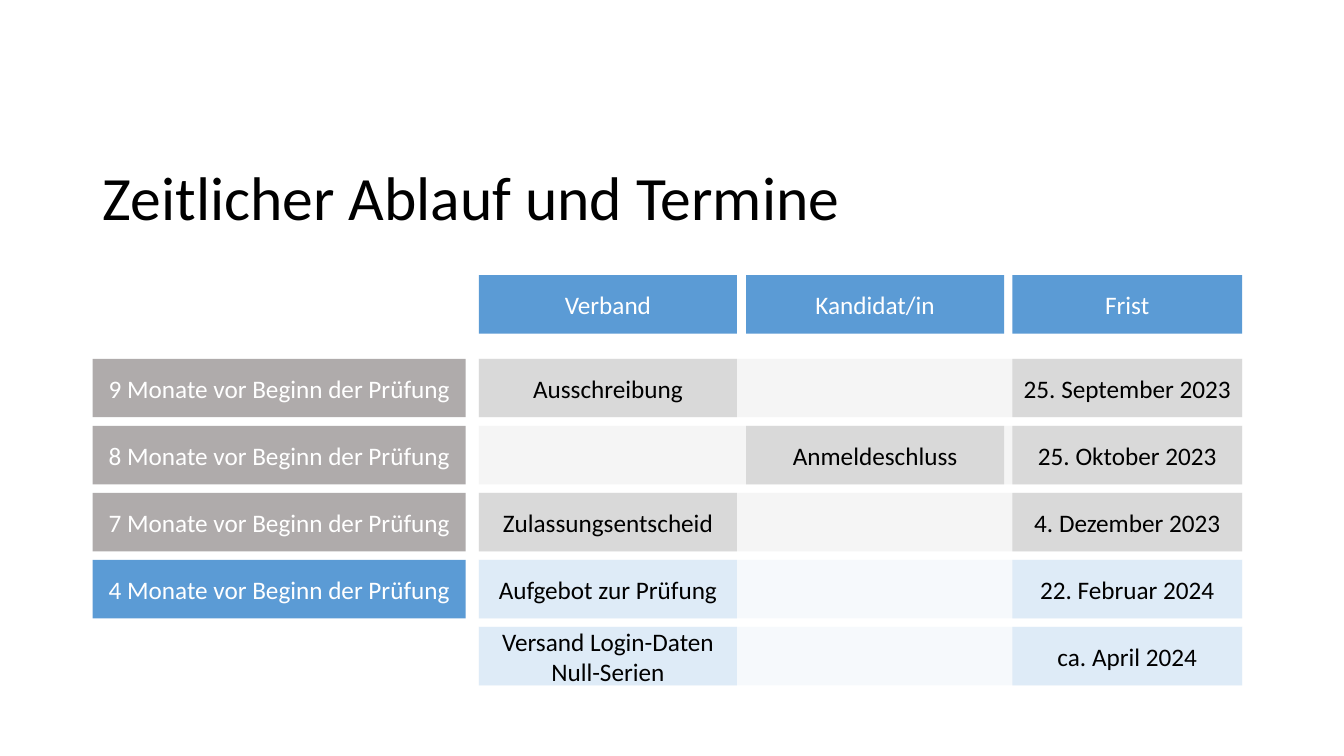
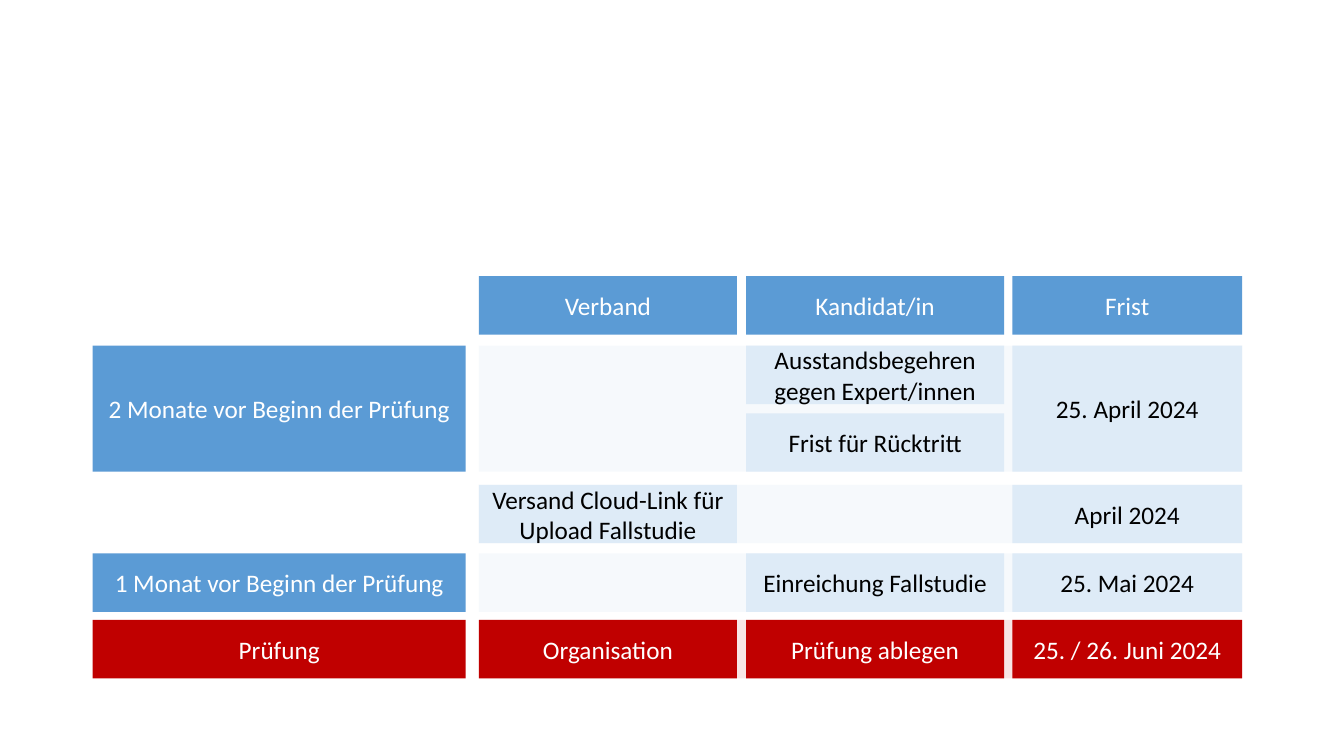
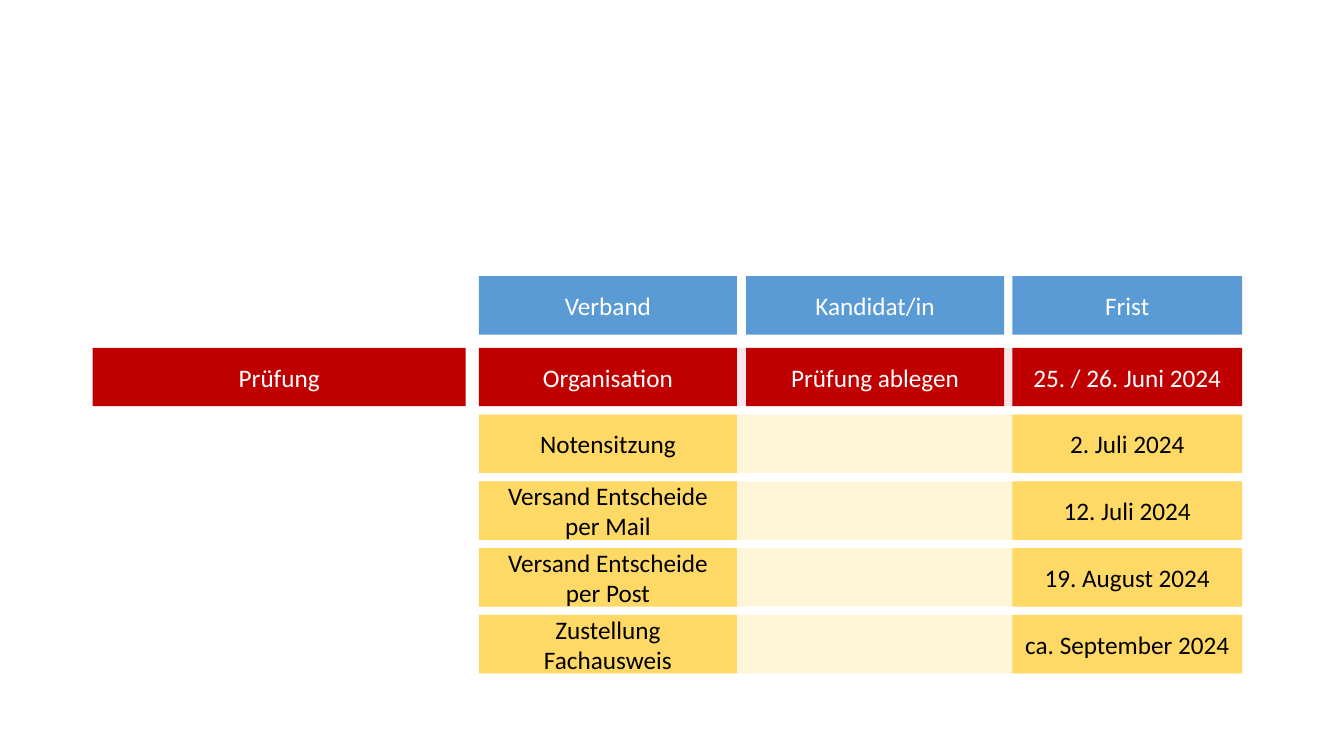
"""Build the three slides of an examination schedule."""
from dataclasses import dataclass
from typing import NamedTuple

from lxml.etree import SubElement
from pptx import Presentation
from pptx.dml.color import RGBColor
from pptx.enum.shapes import MSO_SHAPE
from pptx.enum.text import MSO_ANCHOR, MSO_AUTO_SIZE, PP_ALIGN
from pptx.oxml.ns import qn
from pptx.util import Inches, Pt


class Column(NamedTuple):
    left: float
    width: float


@dataclass(frozen=True)
class Phase:
    label_fill: str
    cell_fill: str
    cell_text: str
    band_fill: str
    band_opacity: int


@dataclass(frozen=True)
class Milestone:
    phase: Phase
    period: str
    organiser_task: str
    candidate_tasks: tuple[str, ...]
    deadline: str


@dataclass(frozen=True)
class Schedule:
    title: str
    header_top: float
    tops: tuple[float, ...]
    milestones: tuple[Milestone, ...]


WHITE, BLACK, BLUE, RED = "FFFFFF", "000000", "5B9BD5", "C00000"
PALE_BLUE, YELLOW = "DEEBF7", "FFD966"
PAST = Phase("AFABAB", "D9D9D9", BLACK, "D0CECE", 20)
UPCOMING = Phase(BLUE, PALE_BLUE, BLACK, PALE_BLUE, 25)
EXAM = Phase(RED, RED, WHITE, RED, 10)
RESULTS = Phase(YELLOW, YELLOW, BLACK, YELLOW, 25)

PERIOD = Column(0.92, 3.7)
ORGANISER = Column(4.75, 2.56)
CANDIDATE = Column(7.4, 2.56)
DEADLINE = Column(10.04, 2.28)
BAND = Column(ORGANISER.left, DEADLINE.left + DEADLINE.width - ORGANISER.left)
HEADERS = ((ORGANISER, "Verband"), (CANDIDATE, "Kandidat/in"), (DEADLINE, "Frist"))
CELL_HEIGHT = 0.58
TASK_PITCH = 0.67

CELL_FONT = {"name": "Calibri", "size": Pt(18), "bold": False}
TITLE_FONT = {"name": "Calibri", "size": Pt(44), "bold": False}
CELL_FRAME = {"word_wrap": True, "vertical_anchor": MSO_ANCHOR.MIDDLE}
TITLE_FRAME = CELL_FRAME | {"auto_size": MSO_AUTO_SIZE.NONE}
CELL_PARAGRAPH = {"alignment": PP_ALIGN.CENTER}
TITLE_PARAGRAPH = {"alignment": PP_ALIGN.LEFT, "line_spacing": 0.9}
TITLE_PLACE = {"left": Inches(0.92), "top": Inches(1.5),
               "width": Inches(7.8), "height": Inches(0.98)}


def evenly(first: float, last: float, count: int) -> tuple[float, ...]:
    """Return equally spaced positions from first to last."""
    return tuple(first + i * (last - first) / (count - 1) for i in range(count))


def apply(target, values: dict) -> None:
    """Set every attribute named in values."""
    for attribute, value in values.items():
        setattr(target, attribute, value)


def paint(color_format, color: str) -> None:
    """Give a colour format the hex colour."""
    color_format.rgb = RGBColor.from_string(color)


def write(frame, text: str, color: str, frame_format: dict,
          paragraph_format: dict, font_format: dict) -> None:
    """Put one formatted paragraph into a text frame."""
    apply(frame, frame_format)
    paragraph = frame.paragraphs[0]
    apply(paragraph, paragraph_format)
    run = paragraph.add_run()
    run.text = text
    apply(run.font, font_format)
    paint(run.font.color, color)


def add_box(slide, column: Column, top: float, height: float, fill: str):
    """Draw a plain filled rectangle in a column."""
    box = slide.shapes.add_shape(MSO_SHAPE.RECTANGLE, Inches(column.left), Inches(top),
                                 Inches(column.width), Inches(height))
    box.shadow.inherit = False
    box.line.fill.background()
    box.fill.solid()
    paint(box.fill.fore_color, fill)
    return box


def add_band(slide, top: float, height: float, phase: Phase) -> None:
    """Draw the translucent band behind a row."""
    band = add_box(slide, BAND, top, height, phase.band_fill)
    color = band.element.find(".//" + qn("a:srgbClr"))
    SubElement(color, qn("a:alpha"), val=str(phase.band_opacity * 1000))


def add_cell(slide, column: Column, top: float, height: float,
             fill: str, text: str, color: str) -> None:
    """Draw a rectangle with centred text, unless the text is empty."""
    if text:
        box = add_box(slide, column, top, height, fill)
        write(box.text_frame, text, color, CELL_FRAME, CELL_PARAGRAPH, CELL_FONT)


def add_milestone(slide, top: float, milestone: Milestone) -> None:
    """Draw one row, as tall as its stack of candidate tasks."""
    phase = milestone.phase
    height = CELL_HEIGHT + TASK_PITCH * max(len(milestone.candidate_tasks) - 1, 0)
    add_band(slide, top, height, phase)
    add_cell(slide, PERIOD, top, height, phase.label_fill, milestone.period, WHITE)
    for column, text in ((ORGANISER, milestone.organiser_task),
                         (DEADLINE, milestone.deadline)):
        add_cell(slide, column, top, height, phase.cell_fill, text, phase.cell_text)
    for i, task in enumerate(milestone.candidate_tasks):
        add_cell(slide, CANDIDATE, top + i * TASK_PITCH, CELL_HEIGHT,
                 phase.cell_fill, task, phase.cell_text)


def add_schedule(presentation, schedule: Schedule) -> None:
    """Add a slide with an optional title, column headers and rows."""
    layout = presentation.slide_layouts[5 if schedule.title else 6]
    slide = presentation.slides.add_slide(layout)
    if schedule.title:
        title = slide.shapes.title
        apply(title, TITLE_PLACE)
        write(title.text_frame, schedule.title, BLACK,
              TITLE_FRAME, TITLE_PARAGRAPH, TITLE_FONT)
    for column, text in HEADERS:
        add_cell(slide, column, schedule.header_top, CELL_HEIGHT, BLUE, text, WHITE)
    for top, milestone in zip(schedule.tops, schedule.milestones):
        add_milestone(slide, top, milestone)


EXAM_DAYS = Milestone(EXAM, "Prüfung", "Organisation", ("Prüfung ablegen",),
                      "25. / 26. Juni 2024")

SCHEDULES = (
    Schedule("Zeitlicher Ablauf und Termine", 2.73, evenly(3.56, 6.22, 5), (
        Milestone(PAST, "9 Monate vor Beginn der Prüfung", "Ausschreibung", (),
                  "25. September 2023"),
        Milestone(PAST, "8 Monate vor Beginn der Prüfung", "", ("Anmeldeschluss",),
                  "25. Oktober 2023"),
        Milestone(PAST, "7 Monate vor Beginn der Prüfung", "Zulassungsentscheid", (),
                  "4. Dezember 2023"),
        Milestone(UPCOMING, "4 Monate vor Beginn der Prüfung", "Aufgebot zur Prüfung", (),
                  "22. Februar 2024"),
        Milestone(UPCOMING, "", "Versand Login-Daten Null-Serien", (), "ca. April 2024"),
    )),
    Schedule("", 2.74, (3.43, 4.81, 5.49, 6.15), (
        Milestone(UPCOMING, "2 Monate vor Beginn der Prüfung", "",
                  ("Ausstandsbegehren gegen Expert/innen", "Frist für Rücktritt"),
                  "25. April 2024"),
        Milestone(UPCOMING, "", "Versand Cloud-Link für Upload Fallstudie", (),
                  "April 2024"),
        Milestone(UPCOMING, "1 Monat vor Beginn der Prüfung", "",
                  ("Einreichung Fallstudie",), "25. Mai 2024"),
        EXAM_DAYS,
    )),
    Schedule("", 2.74, evenly(3.45, 6.1, 5), (
        EXAM_DAYS,
        Milestone(RESULTS, "", "Notensitzung", (), "2. Juli 2024"),
        Milestone(RESULTS, "", "Versand Entscheide per Mail", (), "12. Juli 2024"),
        Milestone(RESULTS, "", "Versand Entscheide per Post", (), "19. August 2024"),
        Milestone(RESULTS, "", "Zustellung Fachausweis", (), "ca. September 2024"),
    )),
)


def main() -> None:
    """Build and save the presentation."""
    presentation = Presentation()
    apply(presentation, {"slide_width": Inches(13.33), "slide_height": Inches(7.5)})
    for schedule in SCHEDULES:
        add_schedule(presentation, schedule)
    presentation.save("out.pptx")


if __name__ == "__main__":
    main()
